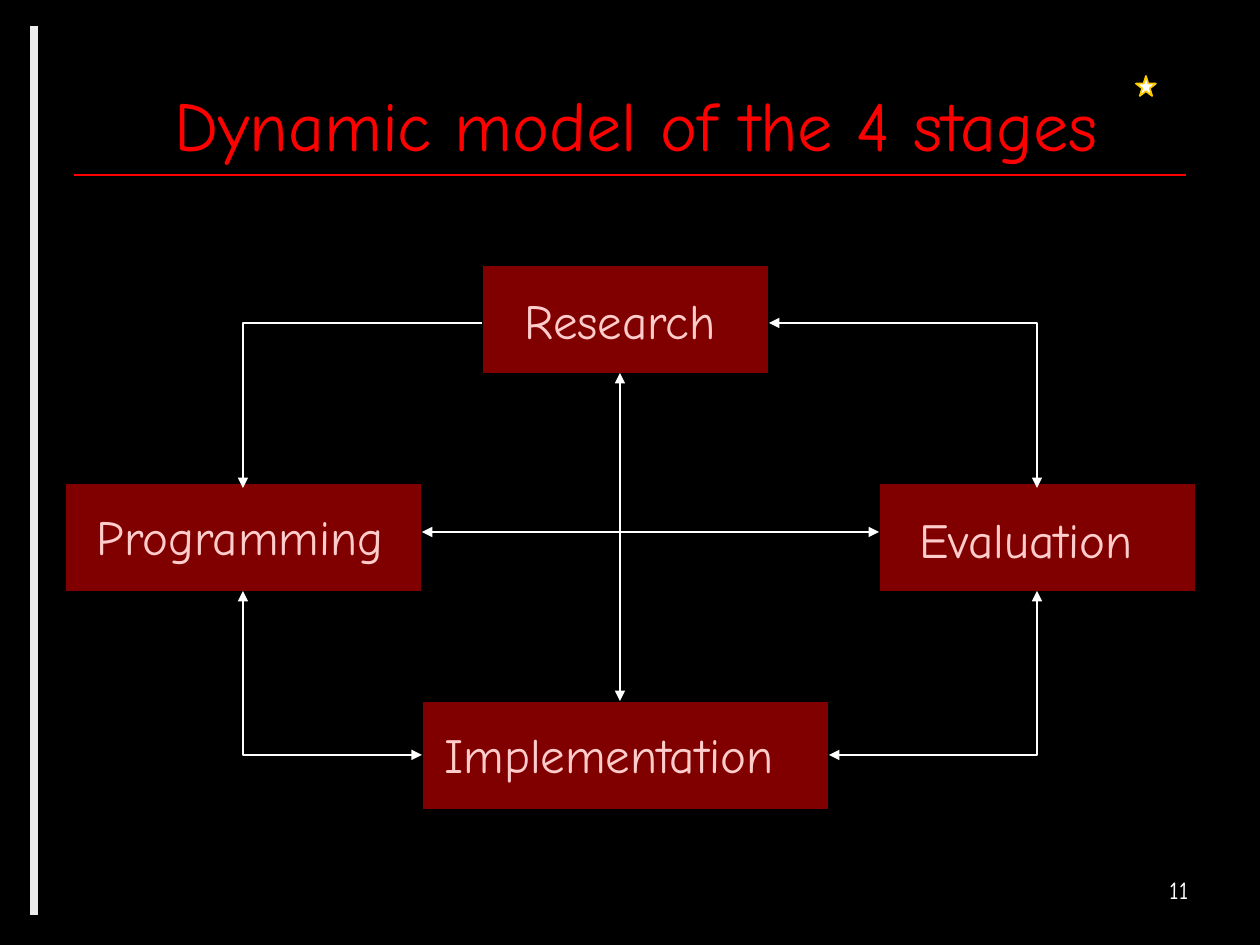
from dataclasses import dataclass

from lxml.etree import SubElement
from pptx import Presentation
from pptx.dml.color import RGBColor
from pptx.enum.shapes import MSO_CONNECTOR as CONN, MSO_SHAPE as SHAPE
from pptx.enum.text import MSO_ANCHOR as ANCHOR, PP_ALIGN as ALIGN
from pptx.oxml.ns import qn
from pptx.util import Pt


@dataclass(frozen=True)
class Theme:
    font: str = "Comic Neue"
    back: str = "000000"
    accent: str = "FF0000"
    bar: str = "ECECEC"
    box: str = "800000"
    label: str = "FFCCCC"
    white: str = "FFFFFF"
    gold: str = "FFCC00"
    title_size: int = 40
    label_size: int = 28
    number_size: int = 14


def px(n):
    return round(n * 914400 / 126)


def rgb(value):
    return RGBColor.from_string(value)


class Deck:
    def __init__(self, theme):
        self.theme = theme
        self.prs = Presentation()
        self.prs.slide_width, self.prs.slide_height = px(1260), px(945)
        self.s = self.prs.slides.add_slide(self.prs.slide_layouts[6])
        fill = self.s.background.fill
        fill.solid()
        fill.fore_color.rgb = rgb(theme.back)

    def shape(self, kind, box, fill, line, width):
        sp = self.s.shapes.add_shape(kind, *map(px, box))
        sp.shadow.inherit = False
        sp.fill.solid()
        sp.fill.fore_color.rgb = rgb(fill)
        sp.line.color.rgb = rgb(line)
        sp.line.width = Pt(width)

    def text(self, text, box, size, color, align=ALIGN.LEFT, anchor=ANCHOR.TOP):
        tf = self.s.shapes.add_textbox(*map(px, box)).text_frame
        tf.word_wrap = True
        tf.vertical_anchor = anchor
        p = tf.paragraphs[0]
        p.text = text
        p.alignment = align
        r = p.runs[0]
        r.font.name = self.theme.font
        r.font.size = Pt(size)
        r.font.color.rgb = rgb(color)

    def line(self, start, end, color, width=0.75, arrows=(), bent=False):
        kind = CONN.ELBOW if bent else CONN.STRAIGHT
        c = self.s.shapes.add_connector(kind, *map(px, start + end))
        c.line.color.rgb = rgb(color)
        c.line.width = Pt(width)
        sp_pr = c._element.spPr
        if bent:  # one corner: across first, then up or down
            sp_pr.find(qn("a:prstGeom")).set("prst", "bentConnector2")
        ln = sp_pr.find(qn("a:ln"))
        for tag in arrows:
            SubElement(ln, qn(tag), type="triangle")
        SubElement(sp_pr, qn("a:effectLst"))


def main():
    t = Theme()
    deck = Deck(t)

    # Frame lines, page number and title
    deck.line((74, 175), (1186, 175), t.accent, 1)
    deck.line((34, 26), (34, 915), t.bar, 5)
    deck.text("11", (907, 869, 294, 66), t.number_size, t.white, ALIGN.RIGHT)
    deck.text("Dynamic model of the 4 stages", (74, 45, 1124, 158),
              t.title_size, t.accent, ALIGN.CENTER, ANCHOR.MIDDLE)

    # Stages: box left, top, width; label left, top, width, alignment
    stages = {
        "Research": (482, 265, 287, 491, 284, 258, ALIGN.CENTER),
        "Programming": (65, 483, 357, 71, 500, 338, ALIGN.CENTER),
        "Evaluation": (879, 483, 317, 907, 503, 268, ALIGN.LEFT),
        "Implementation": (422, 701, 407, 432, 718, 397, ALIGN.LEFT),
    }
    for left, top, width, *_ in stages.values():
        deck.shape(SHAPE.RECTANGLE, (left, top, width, 109), t.box, t.back, 0.75)
    for name, (_, _, _, left, top, width, align) in stages.items():
        deck.text(name, (left, top, width, 72), t.label_size, t.label, align)

    # Arrows round the cycle, then the two across it
    end_only = ("a:tailEnd",)
    both = ("a:headEnd", "a:tailEnd")
    for start, end, arrows in (
        ((482, 323), (243, 488), end_only),
        ((422, 755), (243, 591), both),
        ((769, 323), (1037, 488), both),
        ((829, 755), (1037, 591), both),
    ):
        deck.line(start, end, t.white, arrows=arrows, bent=True)
    deck.line((620, 373), (620, 701), t.white, arrows=both)
    deck.line((422, 532), (879, 532), t.white, arrows=both)

    # Star
    deck.shape(SHAPE.STAR_5_POINT, (1136, 76, 20, 20), t.white, t.gold, 1)

    deck.prs.save("out.pptx")


if __name__ == "__main__":
    main()
